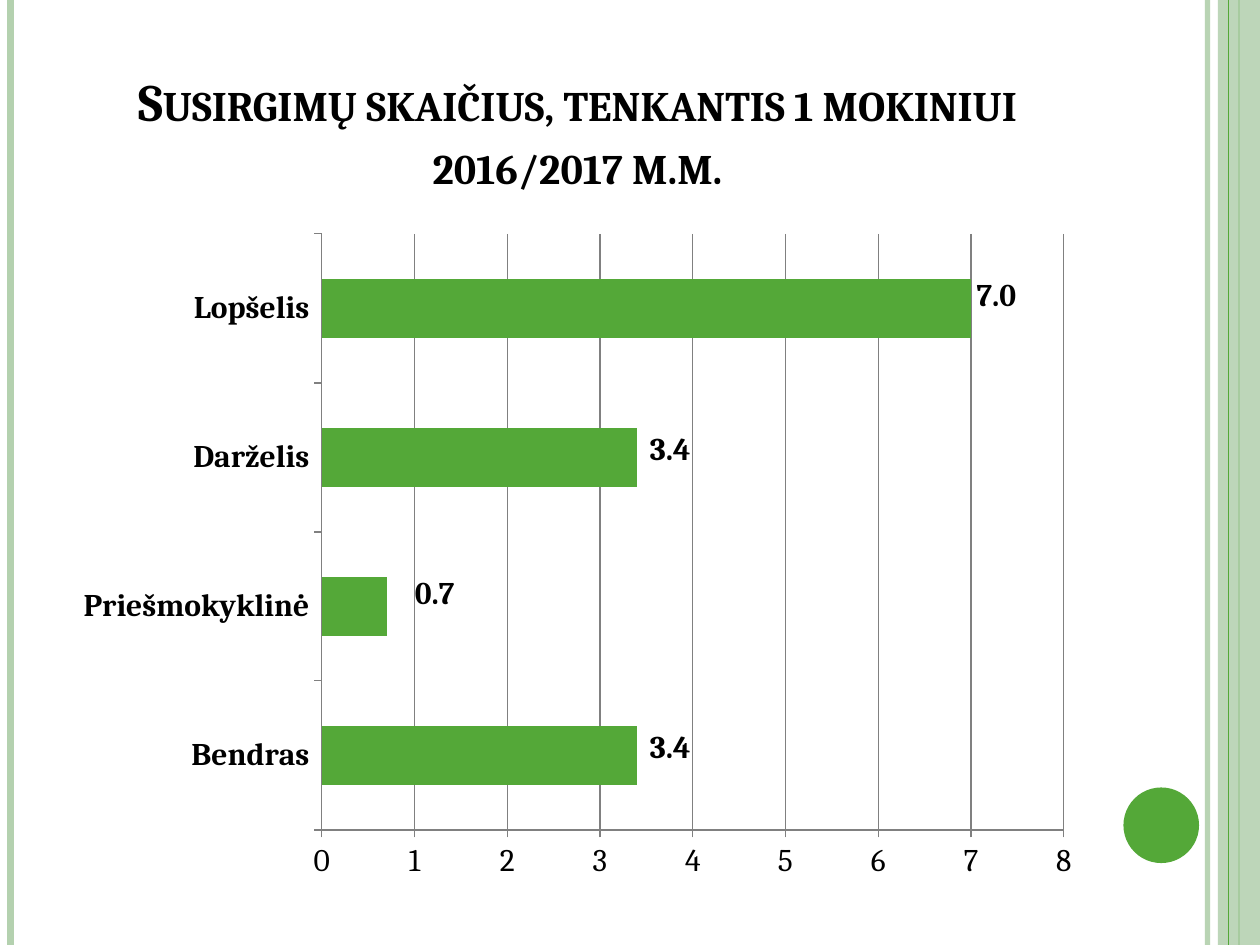
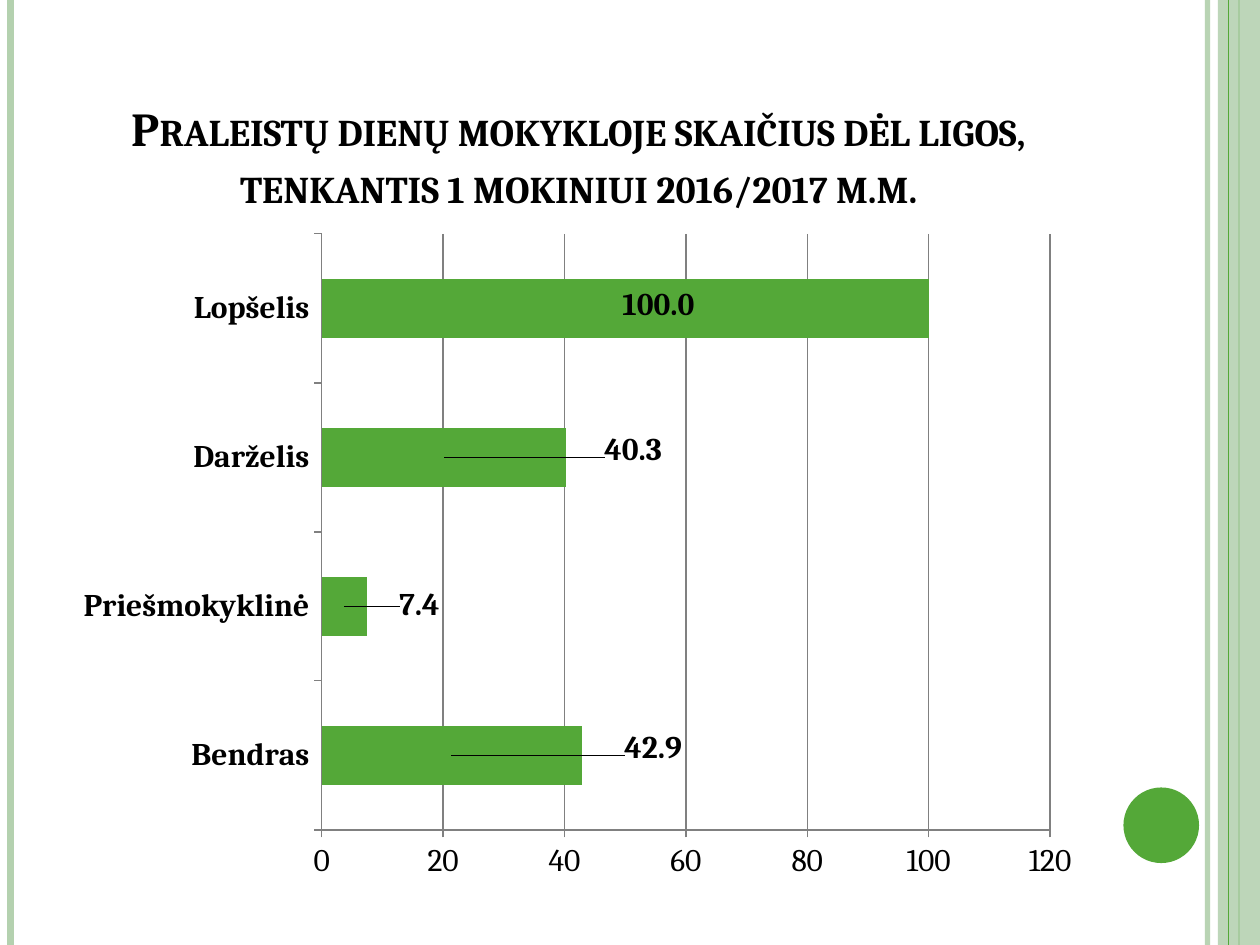
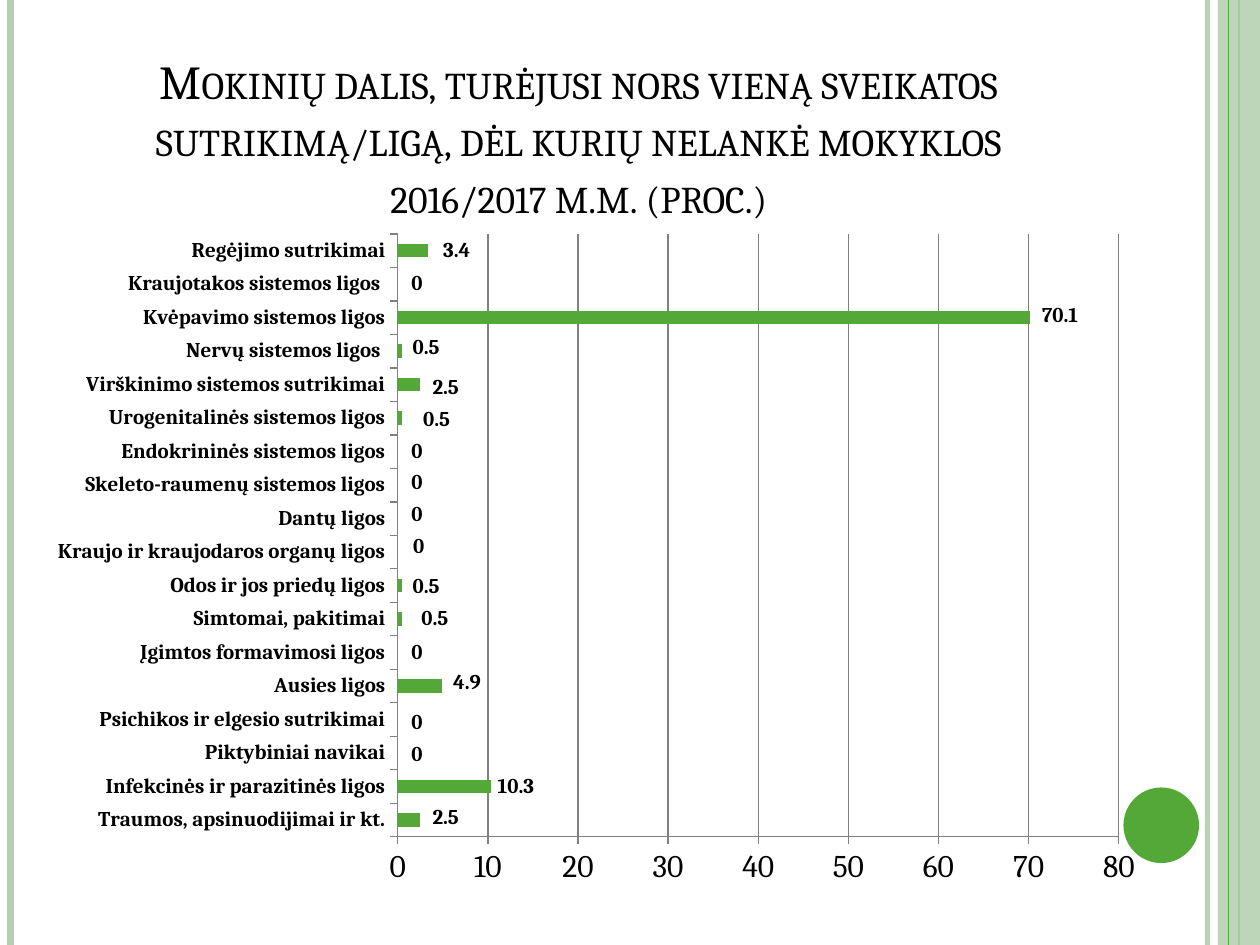
from lxml.etree import SubElement as Sub
from pptx import Presentation
from pptx.chart.data import CategoryChartData as Data
from pptx.dml.color import RGBColor as RGB
from pptx.enum.chart import XL_CHART_TYPE as Kind, XL_TICK_MARK as Tick
from pptx.enum.shapes import MSO_CONNECTOR as Conn, MSO_SHAPE as Form
from pptx.enum.text import MSO_ANCHOR as Anchor, MSO_AUTO_SIZE as Auto, PP_ALIGN as Align
from pptx.oxml.ns import qn
from pptx.util import Pt

GREEN = RGB(0x54, 0xA8, 0x38)
PALE = RGB(0xB4, 0xD1, 0xAF)
GRAY = RGB(0x80, 0x80, 0x80)
BLACK = RGB(0, 0, 0)
FACE = "Cambria"

# Each row: category, value, shift of its label from the bar's middle (points)
CASES = [
    ("Bendras", 3.4, 109, -4),
    ("Priešmokyklinė", 0.7, 46, -7),
    ("Darželis", 3.4, 109, -4),
    ("Lopšelis", 7, 200, -7),
]
DAYS = [
    ("Bendras", 42.9, 115, -4),
    ("Priešmokyklinė", 7.4, 43, -1),
    ("Darželis", 40.3, 108, -4),
    ("Lopšelis", 100, 19, -2),
]
ILLS = [
    ("Traumos, apsinuodijimai ir kt.", 2.5, 21, -1),
    ("Infekcinės ir parazitinės ligos", 10.3, 41, 0),
    ("Piktybiniai navikai", 0, 11, 1),
    ("Psichikos ir elgesio sutrikimai", 0, 11, 2),
    ("Ausies ligos", 4.9, 27, -2),
    ("Įgimtos formavimosi ligos", 0, 11, 0),
    ("Simtomai, pakitimai", 0.5, 20, 0),
    ("Odos ir jos priedų ligos", 0.5, 15, 1),
    ("Kraujo ir kraujodaros organų ligos", 0, 12, -3),
    ("Dantų ligos", 0, 11, -2),
    ("Skeleto-raumenų sistemos ligos", 0, 11, -1),
    ("Endokrininės sistemos ligos", 0, 11, 0),
    ("Urogenitalinės sistemos ligos", 0.5, 21, 1),
    ("Virškinimo sistemos sutrikimai", 2.5, 21, 2),
    ("Nervų sistemos ligos ", 0.5, 15, -2),
    ("Kvėpavimo sistemos ligos", 70.1, 198, -1),
    ("Kraujotakos sistemos ligos ", 0, 11, 0),
    ("Regėjimo sutrikimai", 3.4, 25, 0),
]
PAGES = [
    dict(title="Susirgimų skaičius, tenkantis 1 mokiniui 2016/2017 m.m.",
         spot=(36, 21.6), size=30, bold=True, rows=CASES,
         box=(36, 126, 588, 384), small=18, form="#,##0.0", lead="0"),
    dict(title="Praleistų dienų mokykloje skaičius dėl ligos, "
               "tenkantis 1 mokiniui 2016/2017 m.m.",
         spot=(36.7, 31.7), size=27, bold=True, rows=DAYS,
         box=(36, 126, 588, 384), small=18, form="#,##0.0", lead="1"),
    dict(title="Mokinių dalis, turėjusi nors vieną sveikatos sutrikimą/ligą, "
               "dėl kurių nelankė mokyklos 2016/2017 m.m. (proc.)",
         spot=(36.7, 37.4), size=27, bold=False, rows=ILLS,
         box=(20.2, 126, 641, 388), small=12, form="General", lead="0"),
]


def style(font, **more):
    look = dict(name=FACE, size=Pt(18), bold=False) | more
    for key, val in look.items():
        setattr(font, key, val)
    font.color.rgb = BLACK


def fade(shape, part):
    """Make the shape's first colour partly transparent."""
    tint = shape.element.xpath(".//a:srgbClr")[0]
    Sub(tint, qn("a:alpha"), val=str(part * 1000))


deck = Presentation()
deck.slide_width, deck.slide_height = Pt(720), Pt(540)
layout = deck.slide_layouts[5]
slides = [deck.slides.add_slide(layout) for _ in PAGES]

# Side bands and disc: drawn once, then moved to the layout
draw = slides[0].shapes
decor = []
for x, tint, wide in [(690, PALE, 3), (6, PALE, 4.5), (708, GREEN, 1.5), (702, GREEN, 0.75)]:
    rule = draw.add_connector(Conn.STRAIGHT, Pt(x), 0, Pt(x), Pt(540))
    rule.line.color.rgb = tint
    rule.line.width = Pt(wide)
    Sub(rule.element.spPr, qn("a:effectLst"))
    decor.append(rule)
fade(decor[0], 93)

for form, box, tint in [(Form.RECTANGLE, (696, 0, 24, 540), PALE),
                        (Form.OVAL, (642, 450, 43.2, 43.2), GREEN)]:
    shape = draw.add_shape(form, *map(Pt, box))
    shape.shadow.inherit = False
    shape.fill.solid()
    shape.fill.fore_color.rgb = tint
    shape.line.fill.background()
    decor.append(shape)
band = decor[4]
fade(band, 87)
decor.insert(3, decor.pop(4))

for n, shape in enumerate(decor):
    shape.element.xpath(".//p:cNvPr")[0].set("id", str(20 + n))
    layout.shapes.element.insert(2 + n, shape.element)

for slide, page in zip(slides, PAGES):
    title = slide.shapes.title
    spot = dict(zip(("left", "top", "width", "height"), (*page["spot"], 588, 90)))
    for key, val in spot.items():
        setattr(title, key, Pt(val))
    frame = title.text_frame
    frame.text = page["title"]
    look = dict(word_wrap=True, auto_size=Auto.NONE,
                vertical_anchor=Anchor.BOTTOM, margin_bottom=0)
    for key, val in look.items():
        setattr(frame, key, val)
    para = frame.paragraphs[0]
    para.alignment = Align.CENTER
    style(para.runs[0].font, size=Pt(page["size"]), bold=page["bold"])
    title.element.xpath(".//a:rPr")[0].set("cap", "small")

    names, vals, *_ = zip(*page["rows"])
    data = Data()
    data.categories = names
    data.add_series("Series 1", vals)
    box = page["box"]
    chart = slide.shapes.add_chart(Kind.BAR_STACKED, *map(Pt, box), data).chart
    chart.has_legend = chart.has_title = False
    style(chart.font)

    cat, val = chart.category_axis, chart.value_axis
    style(cat.tick_labels.font, size=Pt(page["small"]), bold=True)
    style(val.tick_labels.font)
    val.tick_labels.number_format = "General"
    val.tick_labels.number_format_is_linked = False
    val.has_major_gridlines = True
    for axis in (cat, val):
        axis.major_tick_mark = Tick.OUTSIDE
        axis.minor_tick_mark = Tick.NONE
    for part in (cat, val, val.major_gridlines):
        part.format.line.color.rgb = GRAY
        part.format.line.width = Pt(0.75)

    plot = chart.plots[0]
    plot.gap_width, plot.overlap = 150, 100
    plot.vary_by_categories = False
    bars = plot.series[0]
    bars.format.fill.solid()
    bars.format.fill.fore_color.rgb = GREEN

    labels = bars.data_labels
    labels.show_value = True
    labels.number_format = page["form"]
    labels.number_format_is_linked = False
    bold = dict(size=Pt(page["small"]), bold=True)
    style(labels.font, **bold)
    for n in range(len(names)):
        style(bars.points[n].data_label.font, **bold)

    root = chart.element
    for mark, (_, _, dx, dy) in zip(root.xpath(".//c:dLbl"), page["rows"]):
        place = mark.makeelement(qn("c:layout"))
        mark.insert(1, place)
        inner = Sub(place, qn("c:manualLayout"))
        Sub(inner, qn("c:x"), val=f"{dx / box[2]:.4f}")
        Sub(inner, qn("c:y"), val=f"{dy / box[3]:.4f}")
        form = mark.makeelement(qn("c:numFmt"), formatCode=page["form"], sourceLinked="0")
        mark.insert(2, form)
    group = root.xpath(".//c:ser/c:dLbls")[0]
    for old in group.findall(qn("c:showLeaderLines")):
        group.remove(old)
    Sub(group, qn("c:showLeaderLines"), val=page["lead"])

deck.save("out.pptx")
